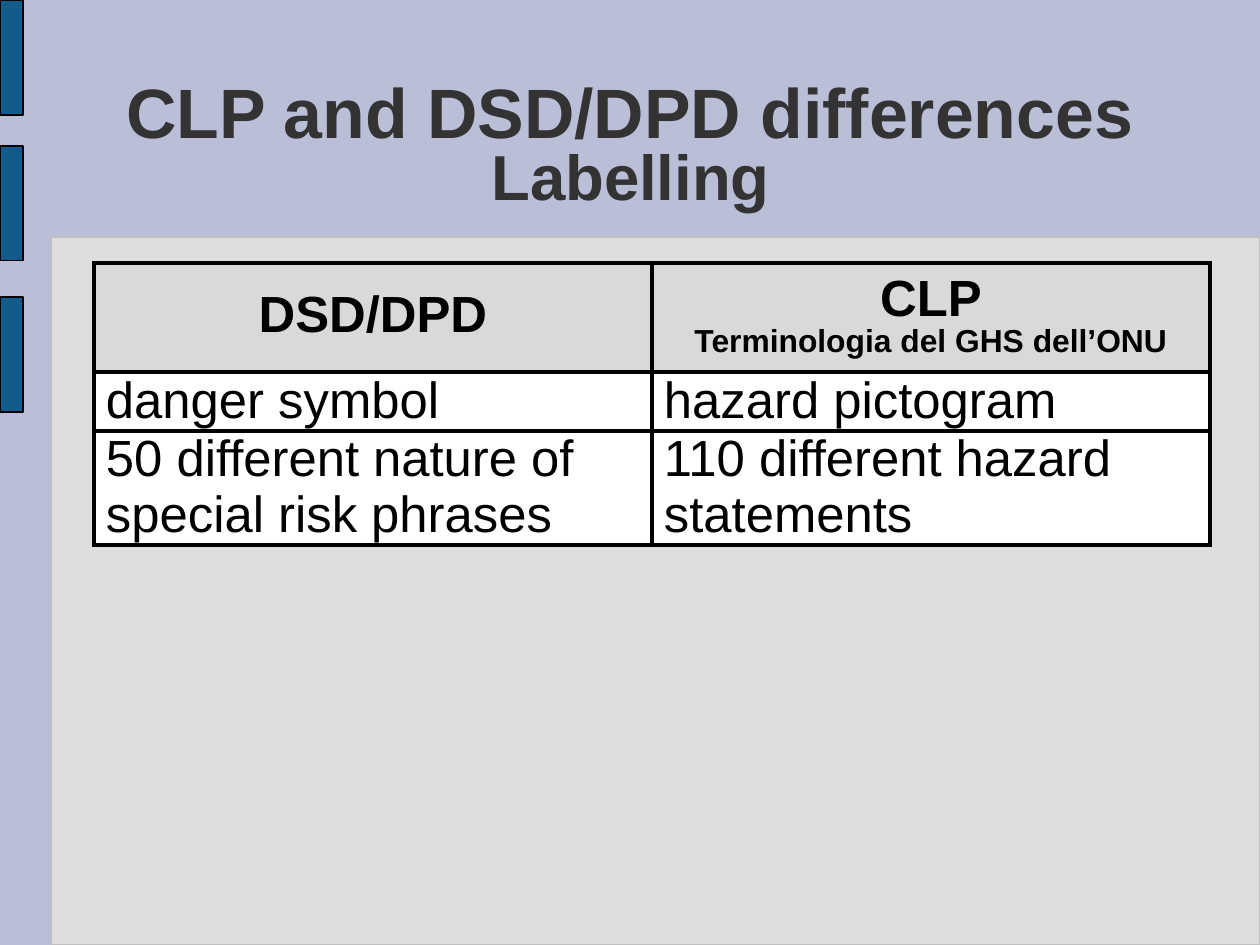
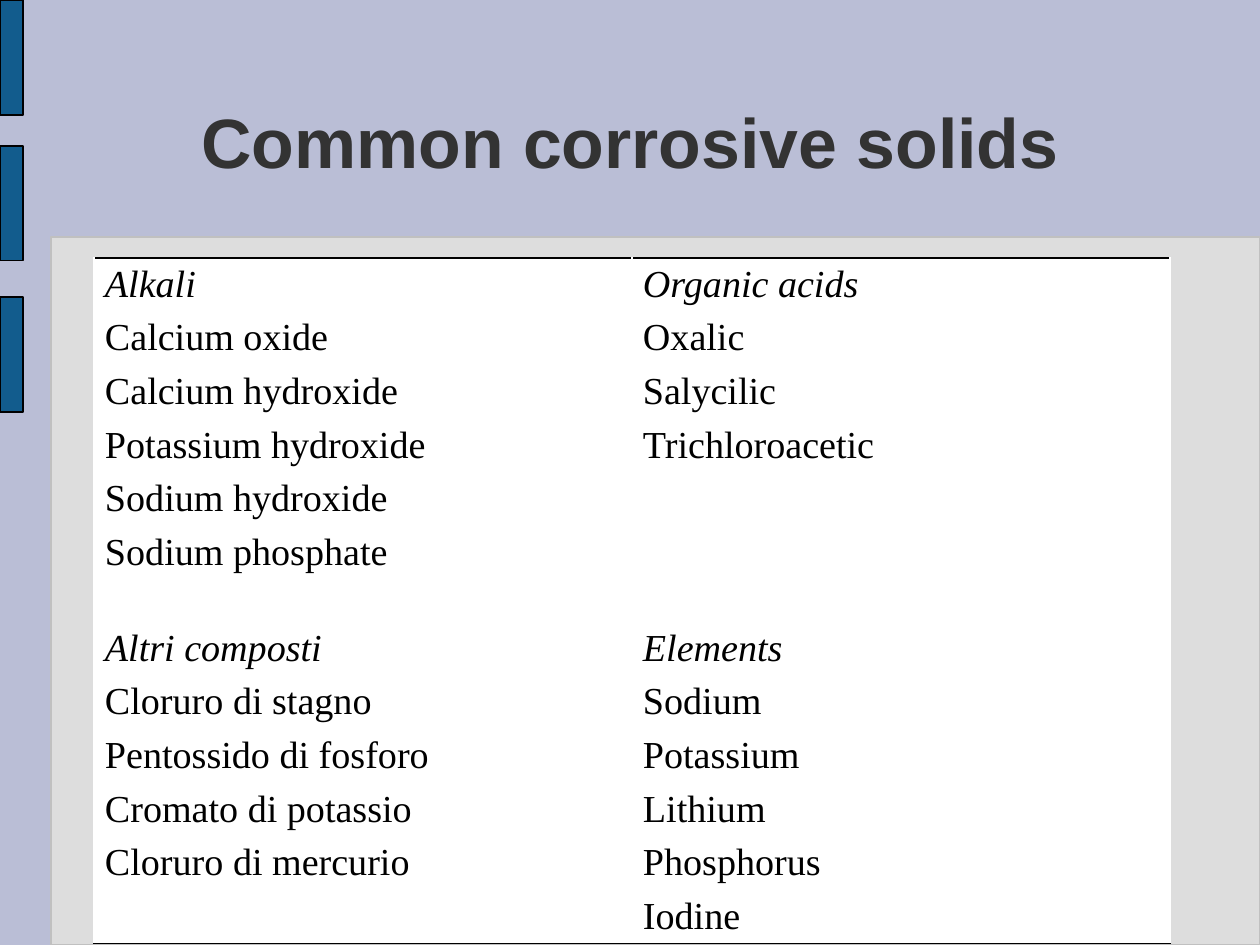
"""Build two slides on chemical labelling and corrosive solids."""
from dataclasses import dataclass

from lxml import etree
from pptx import Presentation
from pptx.dml.color import RGBColor
from pptx.enum.shapes import MSO_SHAPE
from pptx.enum.text import MSO_ANCHOR, MSO_AUTO_SIZE, PP_ALIGN
from pptx.oxml.ns import qn
from pptx.util import Emu, Pt

RECTANGLE = MSO_SHAPE.RECTANGLE
MIDDLE, TOP = MSO_ANCHOR.MIDDLE, MSO_ANCHOR.TOP
CENTER, LEFT = PP_ALIGN.CENTER, PP_ALIGN.LEFT
NO_AUTOFIT = MSO_AUTO_SIZE.NONE
EMU_PER_PX = 8000
TITLE_ONLY = 5


@dataclass(frozen=True)
class Theme:
    """Colours, fonts and type sizes shared by the slides."""
    background: str = "BABED6"
    panel: str = "DDDDDD"
    panel_line: str = "C0C0C0"
    band: str = "125C8D"
    ink: str = "000000"
    title: str = "333333"
    header: str = "D9D9D9"
    paper: str = "FFFFFF"
    sans: str = "Arial"
    serif: str = "Times New Roman"
    title_size: int = 44
    subtitle_size: int = 40
    table_size: int = 32
    note_size: int = 20
    list_size: int = 24


THEME = Theme()
BAND_TOPS = (0, 146, 297)
HEADERS = (
    [("DSD/DPD", THEME.table_size)],
    [("CLP", THEME.table_size),
     ("Terminologia del GHS dell’ONU", THEME.note_size)],
)
LABELLING = (
    ("danger symbol", "hazard pictogram"),
    ("50 different nature of special risk phrases",
     "110 different hazard statements"),
)
SOLIDS = (
    ("Alkali", "Organic acids"),
    ("Calcium oxide", "Oxalic"),
    ("Calcium hydroxide", "Salycilic"),
    ("Potassium hydroxide", "Trichloroacetic"),
    ("Sodium hydroxide", ""),
    ("Sodium phosphate", ""),
    ("Altri composti", "Elements"),
    ("Cloruro di stagno", "Sodium"),
    ("Pentossido di fosforo", "Potassium"),
    ("Cromato di potassio", "Lithium"),
    ("Cloruro di mercurio", "Phosphorus"),
    ("", "Iodine"),
)
GROUP_ROWS = (0, 6)
GROUP_END = 5


def px(length):
    """Turn whole pixels into EMU."""
    return Emu(length * EMU_PER_PX)


def color(code):
    """Return the colour for a hex code."""
    return RGBColor.from_string(code)


def add_span(para, text, size, font, ink=THEME.ink, bold=False, italic=False):
    """Add one formatted run to a paragraph."""
    span = para.add_run()
    span.text = text
    span.font.size = Pt(size)
    span.font.name = font
    span.font.bold = bold
    span.font.italic = italic
    span.font.color.rgb = color(ink)


def add_box(page, left, top, width, height, fill, line):
    """Add a plain outlined rectangle."""
    box = page.shapes.add_shape(
        RECTANGLE, px(left), px(top), px(width), px(height))
    box.shadow.inherit = False
    box.fill.solid()
    box.fill.fore_color.rgb = color(fill)
    box.line.color.rgb = color(line)
    box.line.width = Pt(0.75)
    return box


def set_margins(target, left, top, right, bottom):
    """Set the inner margins of a text frame or cell."""
    target.margin_left, target.margin_top = px(left), px(top)
    target.margin_right, target.margin_bottom = px(right), px(bottom)


def format_layout(deck, layout, page):
    """Set background, panel, bands and title place for all slides."""
    background = deck.slide_master.background.fill
    background.solid()
    background.fore_color.rgb = color(THEME.background)
    title = layout.placeholders[0]
    boxes = [add_box(page, 51, 237, 1209, 708, THEME.panel, THEME.panel_line)]
    boxes += [add_box(page, 0, top, 23, 115, THEME.band, THEME.ink)
              for top in BAND_TOPS]
    for box in boxes:
        title.element.addprevious(box.element)
    title.left, title.top = px(93), px(70)
    title.width, title.height = px(1075), px(157)
    frame = title.text_frame
    set_margins(frame, 0, 0, 0, 0)
    frame.vertical_anchor = MIDDLE
    frame.auto_size = NO_AUTOFIT


def write_title(page, title, subtitle=None):
    """Fill the title placeholder, with an optional second line."""
    para = page.shapes.title.text_frame.paragraphs[0]
    para.alignment = CENTER
    para.line_spacing = 0.81
    add_span(para, title, THEME.title_size, THEME.sans, THEME.title, True)
    if subtitle:
        para.add_line_break()
        add_span(para, subtitle, THEME.subtitle_size, THEME.sans,
                 THEME.title, True)


def add_grid(page, left, top, column_width, heights):
    """Add an unbanded two-column table."""
    frame = page.shapes.add_table(
        len(heights), 2, px(left), px(top), px(2 * column_width), sum(heights))
    table = frame.table
    table.first_row = False
    table.horz_banding = False
    for column in table.columns:
        column.width = px(column_width)
    for row, height in zip(table.rows, heights):
        row.height = height
    return table


def paint_cell(cell, fill, anchor, sides="", width=1):
    """Give a cell its borders, fill and anchor."""
    properties = cell._tc.get_or_add_tcPr()
    for side in sides:
        line = etree.SubElement(
            properties, qn(f"a:ln{side}"), w=str(Pt(width)))
        solid = etree.SubElement(line, qn("a:solidFill"))
        etree.SubElement(solid, qn("a:srgbClr"), val=THEME.ink)
    cell.fill.solid()
    cell.fill.fore_color.rgb = color(fill)
    cell.vertical_anchor = anchor


def add_para(cell, index, alignment, spacing):
    """Return a formatted paragraph of a cell."""
    frame = cell.text_frame
    para = frame.add_paragraph() if index else frame.paragraphs[0]
    para.alignment = alignment
    para.line_spacing = spacing
    return para


def add_labelling_table(page):
    """Add the comparison table of the two labelling systems."""
    table = add_grid(page, 94, 263, 558, [px(109), px(59), px(114)])
    for column, lines in enumerate(HEADERS):
        cell = table.cell(0, column)
        paint_cell(cell, THEME.header, MIDDLE, "LRTB", 3)
        for index, (text, size) in enumerate(lines):
            para = add_para(cell, index, CENTER, 0.9)
            add_span(para, text, size, THEME.sans, bold=True)
    for row, texts in enumerate(LABELLING, start=1):
        for column, text in enumerate(texts):
            cell = table.cell(row, column)
            paint_cell(cell, THEME.paper, MIDDLE, "LRTB", 3)
            set_margins(cell, 12, 0, 0, 0)
            para = add_para(cell, 0, LEFT, 0.98)
            add_span(para, text, THEME.table_size, THEME.sans)


def add_solids_table(page):
    """Add the grouped list of corrosive solids."""
    last = len(SOLIDS) - 1
    heights = [px(590) // last] * len(SOLIDS)
    heights[GROUP_END] = px(96)
    table = add_grid(page, 94, 258, 538, heights)
    borders = {0: "T", last: "B"}
    for row, texts in enumerate(SOLIDS):
        for column, text in enumerate(texts):
            cell = table.cell(row, column)
            paint_cell(cell, THEME.paper, TOP, borders.get(row, ""))
            set_margins(cell, 11, 9, 11, 5)
            if text:
                para = add_para(cell, 0, LEFT, 0.9)
                add_span(para, text, THEME.list_size, THEME.serif,
                         italic=row in GROUP_ROWS)


def main():
    """Build and save the deck."""
    deck = Presentation()
    deck.slide_width, deck.slide_height = px(1260), px(945)
    layout = deck.slide_layouts[TITLE_ONLY]
    labelling = deck.slides.add_slide(layout)
    format_layout(deck, layout, labelling)
    write_title(labelling, "CLP and DSD/DPD differences", "Labelling")
    add_labelling_table(labelling)
    solids = deck.slides.add_slide(layout)
    write_title(solids, "Common corrosive solids")
    add_solids_table(solids)
    deck.save("out.pptx")


if __name__ == "__main__":
    main()
